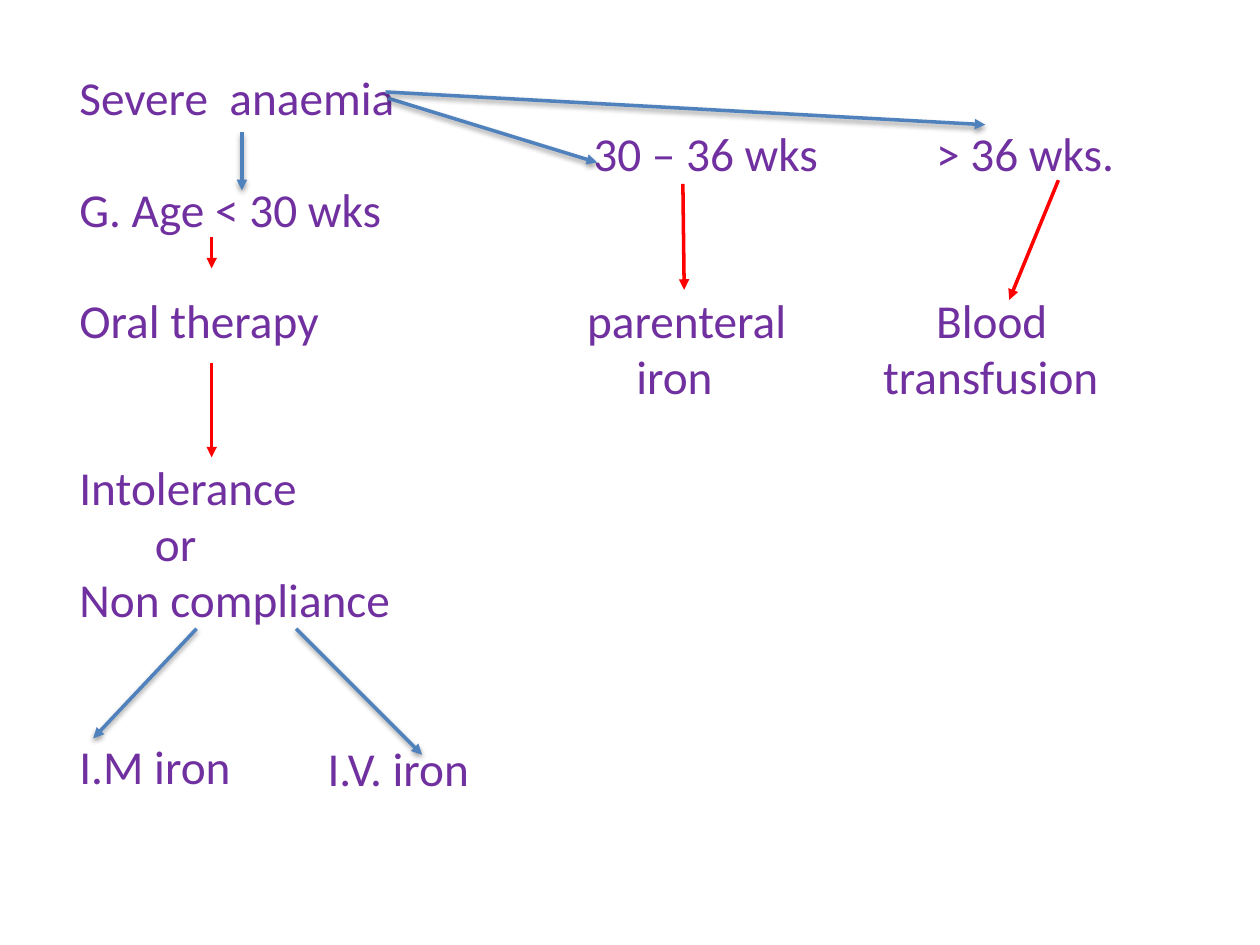
import dataclasses

import pptx
import pptx.dml.color
import pptx.enum.shapes
import pptx.enum.text
import pptx.oxml
import pptx.oxml.ns
import pptx.util

Inches = pptx.util.Inches
Pt = pptx.util.Pt


@dataclasses.dataclass(frozen=True)
class Theme:
    font: str = "Calibri"
    size: float = 27
    text: str = "7030A0"
    treatment: str = "FF0000"
    branch: str = "4F81BD"
    line_pitch: float = 31.95
    space_before: float = 5.8


theme = Theme()


def add_text(frame, text, size, color, font, space_before, indent):
    """Append one line of text, indented by the given inches."""
    first = frame.paragraphs[0]
    para = frame.add_paragraph() if first.runs else first
    para.alignment = pptx.enum.text.PP_ALIGN.LEFT
    para.line_spacing = 0.8
    para.space_before = Pt(space_before)
    properties = para._p.get_or_add_pPr()
    properties.set("marL", str(Inches(indent)))
    properties.set("indent", "0")
    span = para.add_run()
    span.text = text
    span.font.name = font
    span.font.size = Pt(size)
    span.font.color.rgb = pptx.dml.color.RGBColor.from_string(color)


def add_arrow(page, start, end, color, width, shadow):
    arrow = page.shapes.add_connector(
        pptx.enum.shapes.MSO_CONNECTOR.STRAIGHT,
        *[Inches(value) for value in (*start, *end)],
    )
    arrow.line.color.rgb = pptx.dml.color.RGBColor.from_string(color)
    arrow.line.width = Pt(width)
    line = arrow.line._get_or_add_ln()
    line.append(line.makeelement(pptx.oxml.ns.qn("a:tailEnd"), {"type": "triangle"}))
    outer = (
        f'<a:outerShdw blurRad="{Pt(3)}" dist="{Pt(1.6)}" dir="5400000" rotWithShape="0">'
        '<a:srgbClr val="000000"><a:alpha val="38000"/></a:srgbClr></a:outerShdw>'
    )
    arrow._element.spPr.append(pptx.oxml.parse_xml(
        f'<a:effectLst {pptx.oxml.ns.nsdecls("a")}>{outer if shadow else ""}</a:effectLst>'
    ))


deck = pptx.Presentation()
deck.slide_width, deck.slide_height = Inches(10), Inches(7.5)
page = deck.slides.add_slide(deck.slide_layouts[0])
title = page.shapes.title
title._element.getparent().remove(title._element)

# Left, width, first row, height in rows, then lines: text, indent, open rows above
columns = [
    (0.58, 8.59, 0, 14, [
        ("Severe  anaemia", 0, 0),
        ("G. Age < 30 wks", 0, 1),
        ("Oral therapy", 0, 1),
        ("Intolerance", 0, 2),
        ("or", 0.6, 0),
        ("Non compliance", 0, 0),
        ("I.M iron", 0, 2),
    ]),
    (4.61, 2.2, 1, 5, [
        ("30 – 36 wks", 0.05, 0),
        ("parenteral", 0, 2),
        ("iron", 0.39, 0),
    ]),
    (6.96, 2.2, 1, 5, [
        ("> 36 wks.", 0.42, 0),
        ("Blood", 0.42, 2),
        ("transfusion", 0, 0),
    ]),
    (2.55, 1.6, 12, 1, [("I.V. iron", 0, 0)]),
]
for left, width, row, rows, lines in columns:
    top = Inches(0.58) + Pt(row * theme.line_pitch)
    height = Pt(rows * theme.line_pitch) + Inches(0.1)
    if row == 0:
        box = page.placeholders[1]
        box.left, box.top, box.width, box.height = Inches(left), top, Inches(width), Inches(6.42)
    else:
        box = page.shapes.add_textbox(Inches(left), top, Inches(width), height)
    frame = box.text_frame
    frame.word_wrap = True
    frame.auto_size = pptx.enum.text.MSO_AUTO_SIZE.NONE
    frame.vertical_anchor = pptx.enum.text.MSO_ANCHOR.TOP
    frame.margin_left = frame.margin_right = Inches(0.05)
    frame.margin_top = frame.margin_bottom = Inches(0.05)
    for text, indent, open_rows in lines:
        add_text(
            frame, text, size=theme.size, color=theme.text, font=theme.font, indent=indent,
            space_before=theme.space_before + open_rows * theme.line_pitch,
        )

treatment_arrows = [
    ((1.68, 1.88), (1.68, 2.13)),
    ((5.42, 1.46), (5.43, 2.3)),
    ((8.4, 1.43), (8.01, 2.38)),
    ((1.68, 2.88), (1.68, 3.63)),
]
branch_arrows = [
    ((2.35, 4.99), (3.35, 5.99)),
    ((1.56, 4.99), (0.74, 5.86)),
    ((1.92, 1.05), (1.92, 1.51)),
    ((3.08, 0.78), (4.74, 1.29)),
    ((3.06, 0.73), (7.82, 0.99)),
]
for start, end in treatment_arrows:
    add_arrow(page, start, end, color=theme.treatment, width=0, shadow=False)
for start, end in branch_arrows:
    add_arrow(page, start, end, color=theme.branch, width=2, shadow=True)

deck.save("out.pptx")
